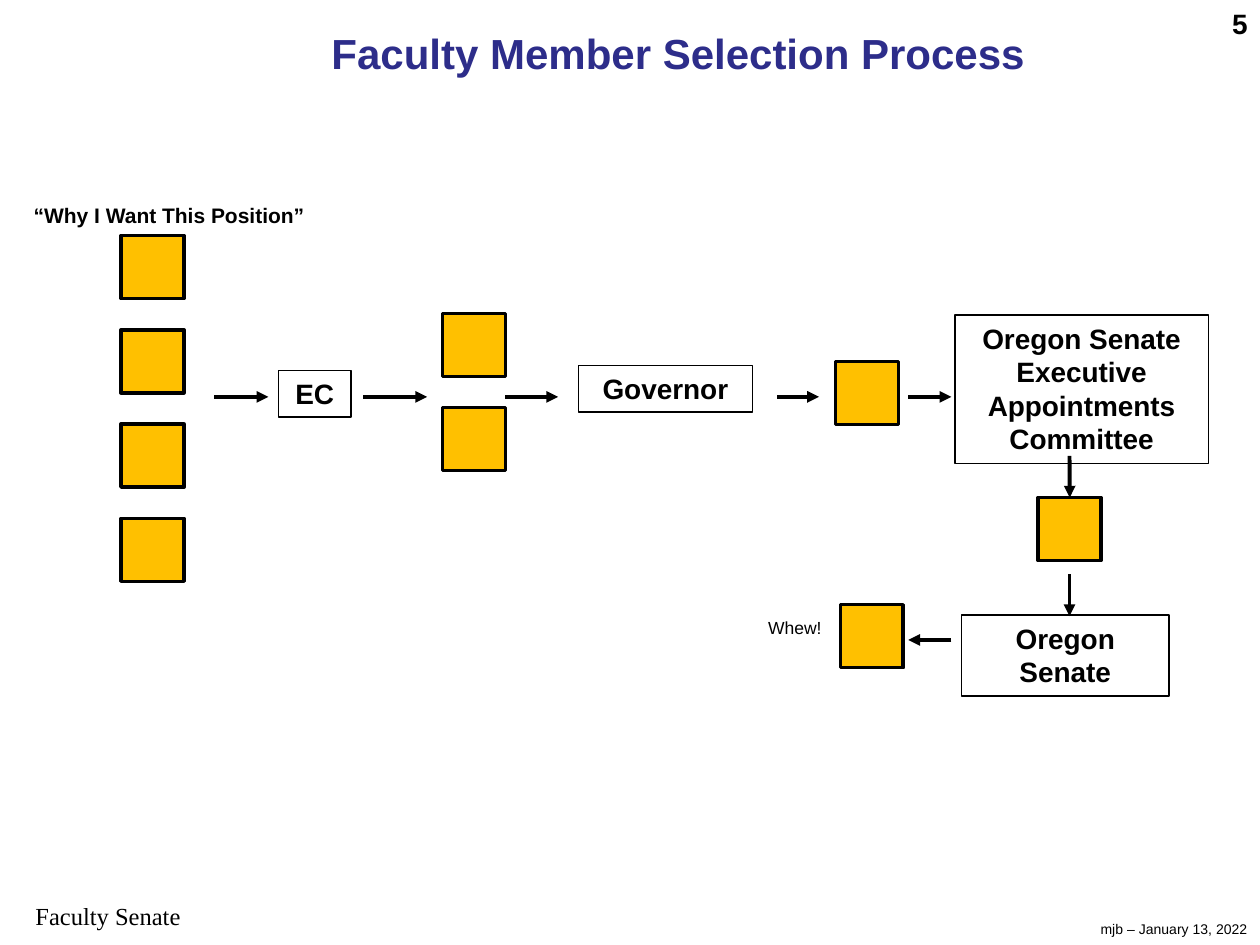
"""Build the slide that shows how a faculty member is selected."""

from dataclasses import dataclass
from typing import Optional

from lxml.etree import SubElement
from pptx import Presentation
from pptx.dml.color import RGBColor
from pptx.enum.shapes import MSO_CONNECTOR, MSO_SHAPE
from pptx.enum.text import MSO_ANCHOR, MSO_AUTO_SIZE, PP_ALIGN
from pptx.oxml.ns import qn
from pptx.util import Cm, Pt

BLACK = RGBColor(0x00, 0x00, 0x00)
NAVY = RGBColor(0x2D, 0x2D, 0x8A)
GOLD = RGBColor(0xFF, 0xC0, 0x00)
SQUARE_SIDE = 1.27
SQUARE_PITCH = 1.9
FLOW_TOP = 8.0


@dataclass
class Frame:
    left: float
    top: float
    width: float
    height: float

    def lengths(self) -> tuple:
        return Cm(self.left), Cm(self.top), Cm(self.width), Cm(self.height)


@dataclass
class Station:
    text: str
    frame: Frame


@dataclass
class Candidates:
    left: float
    top: float
    count: int = 1


@dataclass
class Label:
    text: str
    frame: Frame
    size: int
    align: PP_ALIGN = PP_ALIGN.RIGHT
    bold: bool = False
    font: str = "Arial"


@dataclass
class Arrow:
    start: tuple
    end: tuple
    target: Optional[int] = None


STATIONS = [
    Station("EC", Frame(5.61, 7.47, 1.47, 0.94)),
    Station("Governor", Frame(11.66, 7.37, 3.51, 0.94)),
    Station("Oregon Senate Executive Appointments\vCommittee", Frame(19.25, 6.35, 5.11, 3.0)),
    Station("Oregon Senate", Frame(19.38, 12.4, 4.19, 1.63)),
]
CANDIDATES = [
    Candidates(2.44, 4.75, 4),
    Candidates(8.92, 6.32, 2),
    Candidates(16.84, 7.29),
    Candidates(20.93, 10.03),
    Candidates(16.94, 12.19),
]
FLOW_SPANS = [(4.32, 5.41), (7.32, 8.61), (10.19, 11.25), (15.67, 16.51), (18.31, 19.18)]
ARROWS = [Arrow((left, FLOW_TOP), (right, FLOW_TOP)) for left, right in FLOW_SPANS] + [
    Arrow((21.56, 9.19), (21.56, 10.03), target=3),
    Arrow((21.56, 11.58), (21.56, 12.42)),
    Arrow((19.18, 12.9), (18.31, 12.9)),
]
LABELS = [
    Label("mjb – January 13, 2022", Frame(21.16, 18.44, 4.24, 0.61), 8),
    Label("5", Frame(23.7, 0, 1.7, 0.94), 16, bold=True),
    Label("Faculty Senate", Frame(-0.08, 18.03, 4.52, 0.86), 14, PP_ALIGN.CENTER,
          font="Times New Roman"),
    Label("Whew!", Frame(14.07, 12.32, 2.74, 0.69), 10),
    Label("“Why I Want This Position”", Frame(0.43, 3.96, 6.05, 0.76), 12, PP_ALIGN.LEFT, True),
]


def write_text(box, text: str, *, size: int, align: PP_ALIGN = PP_ALIGN.CENTER,
               bold: bool = True, font: str = "Arial", color: RGBColor = BLACK) -> None:
    frame = box.text_frame
    frame.word_wrap = True
    frame.auto_size = MSO_AUTO_SIZE.SHAPE_TO_FIT_TEXT
    frame.vertical_anchor = MSO_ANCHOR.TOP
    para = frame.paragraphs[0]
    para.text = text
    para.alignment = align
    para.space_before = Pt(0)
    for span in para.runs:
        span.font.size = Pt(size)
        span.font.bold = bold
        span.font.name = font
        span.font.color.rgb = color


def add_rectangle(page, frame: Frame, *, line_width: float, fill: Optional[RGBColor] = None):
    box = page.shapes.add_shape(MSO_SHAPE.RECTANGLE, *frame.lengths())
    box.shadow.inherit = False
    box.line.color.rgb = BLACK
    box.line.width = Pt(line_width)
    if fill is None:
        box.fill.background()
    else:
        box.fill.solid()
        box.fill.fore_color.rgb = fill
    return box


def add_candidates(page, group: Candidates):
    for row in range(group.count):
        frame = Frame(group.left, group.top + row * SQUARE_PITCH, SQUARE_SIDE, SQUARE_SIDE)
        square = add_rectangle(page, frame, line_width=2, fill=GOLD)
    return square


def add_arrow(page, arrow: Arrow, squares: list) -> None:
    ends = [Cm(value) for value in arrow.start + arrow.end]
    connector = page.shapes.add_connector(MSO_CONNECTOR.STRAIGHT, *ends)
    connector.line.color.rgb = BLACK
    connector.line.width = Pt(2.25)
    SubElement(connector.line._get_or_add_ln(), qn("a:tailEnd"), type="triangle")
    SubElement(connector._element.spPr, qn("a:effectLst"))
    if arrow.target is not None:
        connector.end_connect(squares[arrow.target], 0)


def add_title(page, text: str, frame: Frame) -> None:
    title = page.shapes.title
    title.left, title.top, title.width, title.height = frame.lengths()
    write_text(title, text, size=24, color=NAVY)


def main() -> None:
    deck = Presentation()
    deck.slide_width, deck.slide_height = Cm(25.4), Cm(19.05)
    page = deck.slides.add_slide(deck.slide_layouts[5])
    add_title(page, "Faculty Member Selection Process", Frame(6.15, 0.43, 15.04, 1.27))
    for station in STATIONS:
        box = add_rectangle(page, station.frame, line_width=0.75)
        write_text(box, station.text, size=16)
    squares = [add_candidates(page, group) for group in CANDIDATES]
    for arrow in ARROWS:
        add_arrow(page, arrow, squares)
    for label in LABELS:
        box = page.shapes.add_textbox(*label.frame.lengths())
        write_text(box, label.text, size=label.size, align=label.align,
                   bold=label.bold, font=label.font)
    deck.save("out.pptx")


if __name__ == "__main__":
    main()
